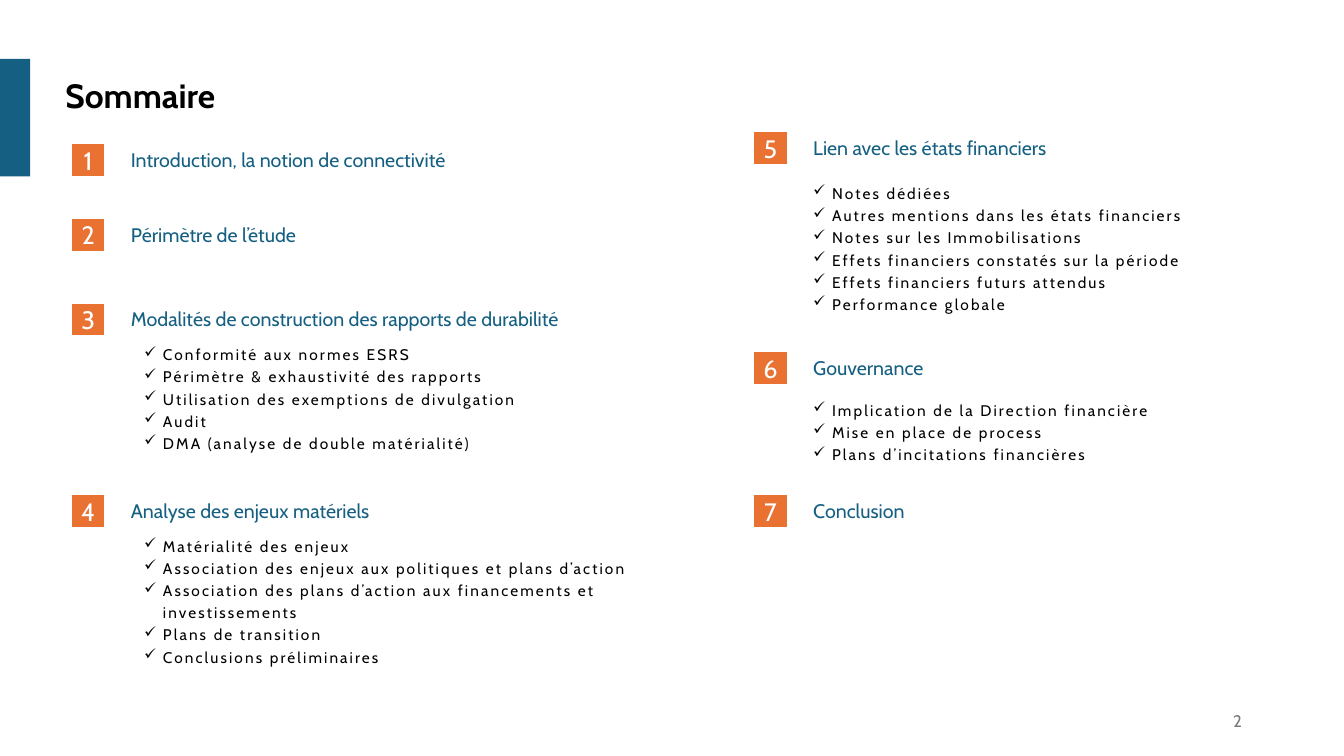
from lxml.etree import SubElement
from pptx import Presentation
from pptx.dml.color import RGBColor
from pptx.enum.shapes import MSO_SHAPE
from pptx.enum.text import MSO_ANCHOR, MSO_AUTO_SIZE, PP_ALIGN
from pptx.oxml.ns import qn
from pptx.util import Pt

BLUE = RGBColor(0x15, 0x60, 0x82)
ORANGE = RGBColor(0xE9, 0x71, 0x32)
WHITE = RGBColor(0xFF, 0xFF, 0xFF)
BLACK = RGBColor(0, 0, 0)
GRAY = RGBColor(0x79, 0x79, 0x79)

TITLE = {"size": Pt(24), "bold": True}
HEAD = {"size": Pt(14)}
DIGIT = {"size": Pt(18)}
ITEM = {"size": Pt(11)}
FOOT = {"size": Pt(12)}

LEFT = [
    (102.2, "Introduction, la notion de connectivité", []),
    (155.5, "Périmètre de l’étude", []),
    (216, "Modalités de construction des rapports de durabilité", [
        "Conformité aux normes ESRS",
        "Périmètre & exhaustivité des rapports",
        "Utilisation des exemptions de divulgation",
        "Audit",
        "DMA (analyse de double matérialité)",
    ]),
    (352.8, "Analyse des enjeux matériels", [
        "Matérialité des enjeux",
        "Association des enjeux aux politiques et plans d’action",
        "Association des plans d’action aux financements et investissements",
        "Plans de transition",
        "Conclusions préliminaires",
    ]),
]
RIGHT = [
    (93.6, "Lien avec les états financiers", [
        "Notes dédiées",
        "Autres mentions dans les états financiers",
        "Notes sur les Immobilisations",
        "Effets financiers constatés sur la période",
        "Effets financiers futurs attendus",
        "Performance globale",
    ]),
    (250.6, "Gouvernance", [
        "Implication de la Direction financière",
        "Mise en place de process",
        "Plans d’incitations financières",
    ]),
    (352.8, "Conclusion", []),
]


def write(para, text, look, color):
    run = para.add_run()
    run.text = text
    for key, value in {"name": "Cabin", **look}.items():
        setattr(run.font, key, value)
    run.font.color.rgb = color
    return run


def add_box(slide, x, y, w, h):
    frame = slide.shapes.add_textbox(Pt(x), Pt(y), Pt(w), Pt(h)).text_frame
    frame.word_wrap = True
    return frame


def add_label(slide, x, y, w, h, text, look, color):
    frame = add_box(slide, x, y, w, h)
    frame.auto_size = MSO_AUTO_SIZE.SHAPE_TO_FIT_TEXT
    write(frame.paragraphs[0], text, look, color)


def add_rect(slide, x, y, w, h, color):
    rect = slide.shapes.add_shape(MSO_SHAPE.RECTANGLE, Pt(x), Pt(y), Pt(w), Pt(h))
    rect.shadow.inherit = False
    rect.fill.solid()
    rect.fill.fore_color.rgb = color
    rect.line.fill.background()
    return rect


def add_badge(slide, x, y, number):
    badge = add_rect(slide, x, y, 25.2, 24.5, ORANGE)
    badge.line.color.rgb = WHITE
    badge.line.width = Pt(2)
    frame = badge.text_frame
    frame.vertical_anchor = MSO_ANCHOR.MIDDLE
    para = frame.paragraphs[0]
    para.alignment = PP_ALIGN.CENTER
    write(para, str(number), DIGIT, WHITE)


def add_list(slide, x, y, w, items):
    frame = add_box(slide, x, y, w, 16 * len(items) + 7.2)
    frame.auto_size = MSO_AUTO_SIZE.SHAPE_TO_FIT_TEXT
    for index, item in enumerate(items):
        para = frame.add_paragraph() if index else frame.paragraphs[0]
        props = para._p.get_or_add_pPr()
        props.set("marL", str(Pt(13.5)))
        props.set("indent", str(-Pt(13.5)))
        SubElement(props, qn("a:buChar")).set("char", "✓")
        para.line_spacing = 1.2
        run = write(para, item, ITEM, BLACK)
        run._r.get_or_add_rPr().set("spc", "150")


def add_column(slide, x, width, inset, gaps, first, topics):
    for number, (y, head, items) in enumerate(topics, first):
        add_badge(slide, x, y, number)
        add_label(slide, x + 36, y, width, 24.5, head, HEAD, BLUE)
        if items:
            add_list(slide, x + inset, y + gaps[number], 394, items)


def add_frame(slide):
    add_rect(slide, 0, 42, 21.6, 84, BLUE)
    add_label(slide, 39.6, 49.7, 432.7, 36, "Sommaire", TITLE, BLACK)
    frame = add_box(slide, 678.2, 500.4, 216, 28.8)
    frame.vertical_anchor = MSO_ANCHOR.MIDDLE
    para = frame.paragraphs[0]
    para.alignment = PP_ALIGN.RIGHT
    write(para, "2", FOOT, GRAY)


def main():
    deck = Presentation()
    deck.slide_width, deck.slide_height = Pt(960), Pt(540)
    slide = deck.slides.add_slide(deck.slide_layouts[6])
    add_frame(slide)
    gaps = {3: 24.5, 4: 24.5, 5: 31.7, 6: 29.5}
    add_column(slide, 50.4, 336, 45.4, gaps, 1, LEFT)
    add_column(slide, 537.8, 336, 36, gaps, len(LEFT) + 1, RIGHT)
    deck.save("out.pptx")


if __name__ == "__main__":
    main()
